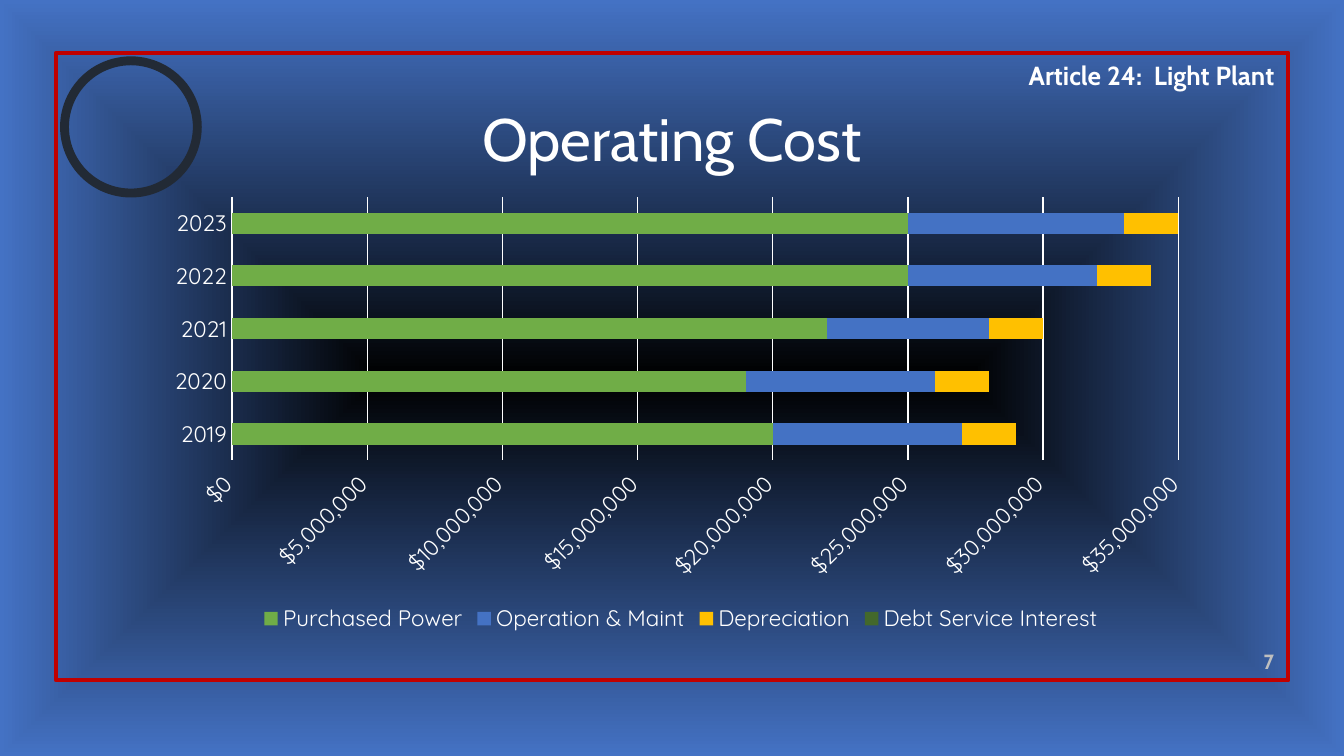
"""Build the Operating Cost slide with its stacked bar chart."""
from lxml import etree
from pptx import Presentation
from pptx import util as u
from pptx.chart import data
from pptx.dml.color import RGBColor
from pptx.enum import chart as ch, shapes, text
from pptx.oxml import parse_xml
from pptx.oxml.ns import nsdecls, qn

WHITE = RGBColor(0xFF, 0xFF, 0xFF)
SILVER = RGBColor(0xBF, 0xBF, 0xBF)
RED = RGBColor(0xC0, 0x00, 0x00)
SLATE = RGBColor(0x22, 0x2A, 0x35)
GREEN = RGBColor(0x70, 0xAD, 0x47)
BLUE = RGBColor(0x44, 0x72, 0xC4)
AMBER = RGBColor(0xFF, 0xC0, 0x00)
DARK_GREEN = RGBColor(0x43, 0x68, 0x2B)
BLACK = RGBColor(0x00, 0x00, 0x00)
BLUE_GREY = RGBColor(0x44, 0x54, 0x6A)

deck = Presentation()
deck.slide_width, deck.slide_height = u.Cm(25.4), u.Cm(14.29)
slide = deck.slides.add_slide(deck.slide_layouts[6])

slide.background.fill.gradient()
gradient = slide.element.find(".//" + qn("a:gradFill"))
stops = "".join(
    f'<a:gs pos="{pos}"><a:srgbClr val="{color}"/></a:gs>'
    for pos, color in ((0, BLACK), (100000, BLUE), (100000, BLUE_GREY)))
gradient.getparent().replace(gradient, parse_xml(
    f'<a:gradFill {nsdecls("a")} rotWithShape="1"><a:gsLst>{stops}</a:gsLst>'
    '<a:path path="shape"><a:fillToRect l="50000" t="50000" r="50000" b="50000"/>'
    '</a:path></a:gradFill>'))

for kind, left, top, width, height, color, weight in (
        (shapes.MSO_SHAPE.RECTANGLE, 1.06, 1.0, 23.29, 11.86, RED, 2.25),
        (shapes.MSO_SHAPE.OVAL, 1.22, 1.15, 2.51, 2.5, SLATE, 4.75)):
    outline = slide.shapes.add_shape(
        kind, u.Cm(left), u.Cm(top), u.Cm(width), u.Cm(height))
    outline.shadow.inherit = False
    outline.fill.background()
    outline.line.color.rgb = color
    outline.line.width = u.Pt(weight)

for words, left, top, width, height, size, color, bold, align, anchor in (
        ("Article 24:  Light Plant", 17.56, 1.0, 6.78, 0.86, 14, WHITE, True,
         text.PP_ALIGN.RIGHT, text.MSO_ANCHOR.TOP),
        ("Operating Cost", 1.27, 1.65, 22.86, 1.91, 32, WHITE, False,
         text.PP_ALIGN.CENTER, text.MSO_ANCHOR.MIDDLE),
        ("7", 22.86, 12.25, 1.47, 0.61, 11, SILVER, True,
         text.PP_ALIGN.RIGHT, text.MSO_ANCHOR.BOTTOM)):
    frame = slide.shapes.add_textbox(
        u.Cm(left), u.Cm(top), u.Cm(width), u.Cm(height)).text_frame
    frame.word_wrap = True
    frame.vertical_anchor = anchor
    line = frame.paragraphs[0]
    line.alignment = align
    run = line.add_run()
    run.text = words
    run.font.name, run.font.size, run.font.bold = "Cabin", u.Pt(size), bold
    run.font.color.rgb = color

MILLION = 1_000_000
DOLLARS = '"$"#,##0_);\\("$"#,##0\\)'
costs = (
    ("Purchased Power", (20, 19, 22, 25, 25), GREEN),
    ("Operation & Maint", (7, 7, 6, 7, 8), BLUE),
    ("Depreciation", (2, 2, 2, 2, 2), AMBER),
    ("Debt Service Interest", (0, 0, 0, 0, 0), DARK_GREEN),
)
cost_data = data.CategoryChartData(number_format=DOLLARS)
cost_data.categories = [str(year) for year in range(2019, 2024)]
for name, millions, _ in costs:
    cost_data.add_series(name, [value * MILLION for value in millions])
chart = slide.shapes.add_chart(
    ch.XL_CHART_TYPE.BAR_STACKED, u.Cm(2.89), u.Cm(3.55), u.Cm(19.96), u.Cm(8.51),
    cost_data).chart
chart.has_title = False
chart.has_legend = True
chart.legend.position = ch.XL_LEGEND_POSITION.BOTTOM
chart.legend.include_in_layout = False

bars = chart.plots[0]
bars.gap_width, bars.overlap, bars.vary_by_categories = 150, 100, False
for series, (_, _, color) in zip(bars.series, costs):
    series.format.fill.solid()
    series.format.fill.fore_color.rgb = color
    series.invert_if_negative = False

years, dollars = chart.category_axis, chart.value_axis
for axis in (years, dollars):
    axis.major_tick_mark = axis.minor_tick_mark = ch.XL_TICK_MARK.NONE
    axis.format.line.fill.background()
for font in (chart.font, chart.legend.font, years.tick_labels.font,
             dollars.tick_labels.font):
    font.name, font.size = "Quicksand", u.Pt(12)
    font.color.rgb = WHITE
chart.font.size = u.Pt(10)

years.has_major_gridlines = False
dollars.minimum_scale, dollars.maximum_scale = 0, 35 * MILLION
dollars.major_unit = 5 * MILLION
dollars.has_major_gridlines = True
dollars.major_gridlines.format.line.color.rgb = WHITE
dollars.major_gridlines.format.line.width = u.Pt(0.75)
dollars.tick_labels.number_format = DOLLARS
dollars.tick_labels.number_format_is_linked = False
dollars._element.find(".//" + qn("a:bodyPr")).set("rot", "-2700000")

plot_area = chart._chartSpace.find(".//" + qn("c:plotArea"))
for layout in plot_area.findall(qn("c:layout")):
    plot_area.remove(layout)
layout = etree.Element(qn("c:layout"))
manual = etree.SubElement(layout, qn("c:manualLayout"))
for tag, value in (("layoutTarget", "inner"), ("xMode", "edge"), ("yMode", "edge"),
                   ("x", 0.075), ("y", 0.02), ("w", 0.896), ("h", 0.586)):
    etree.SubElement(manual, qn("c:" + tag)).set("val", str(value))
plot_area.insert(0, layout)

deck.save("out.pptx")
